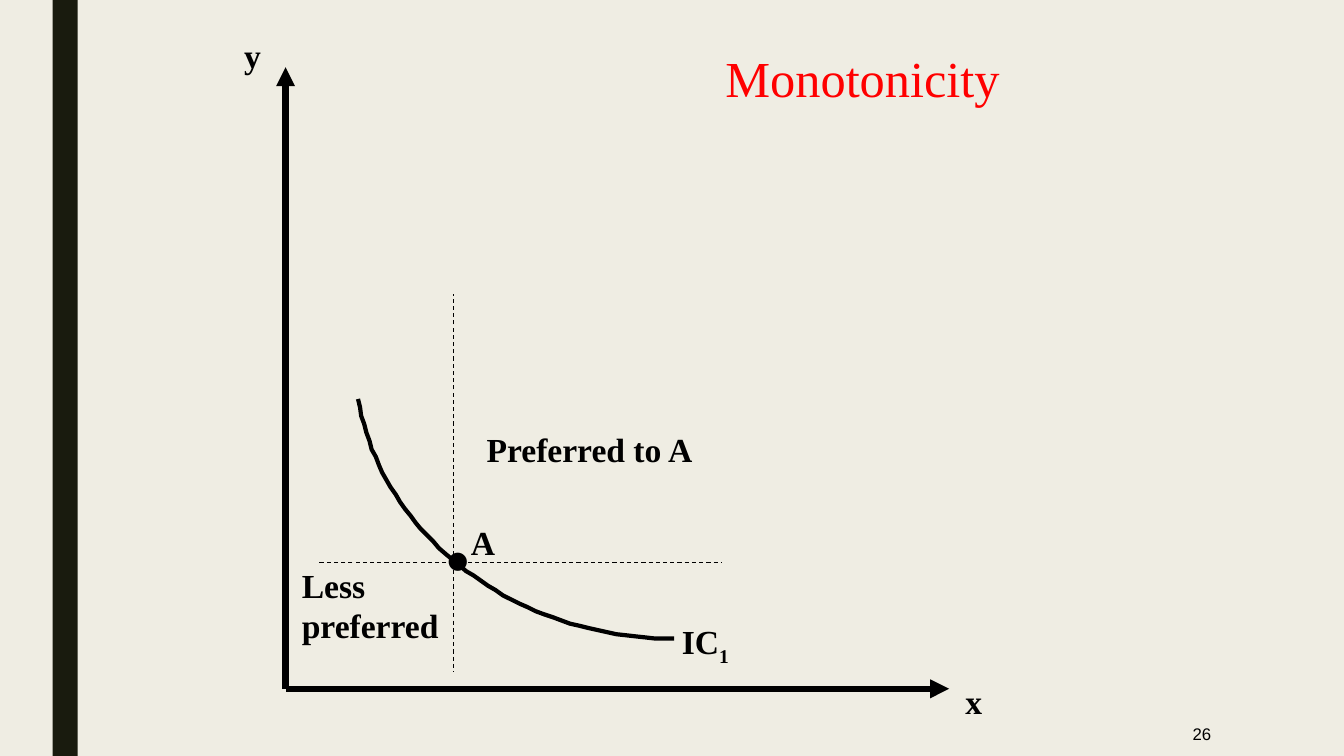
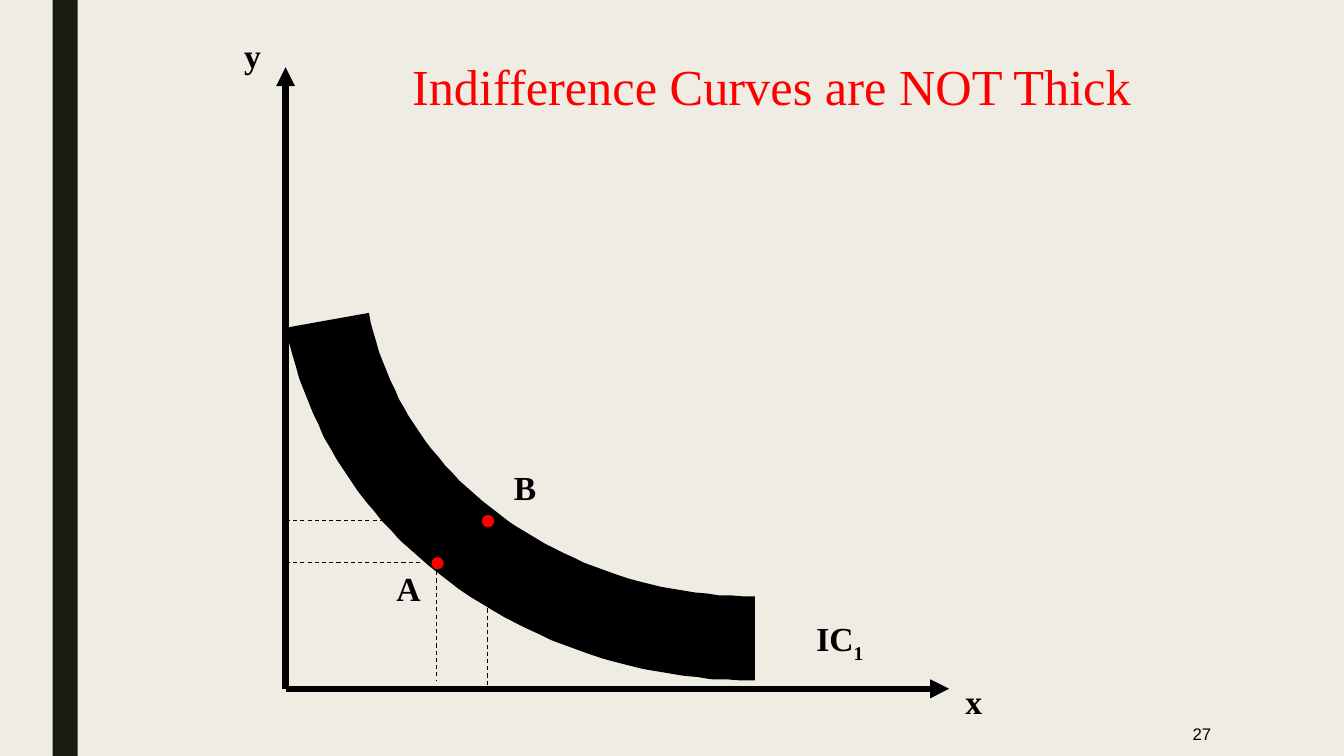
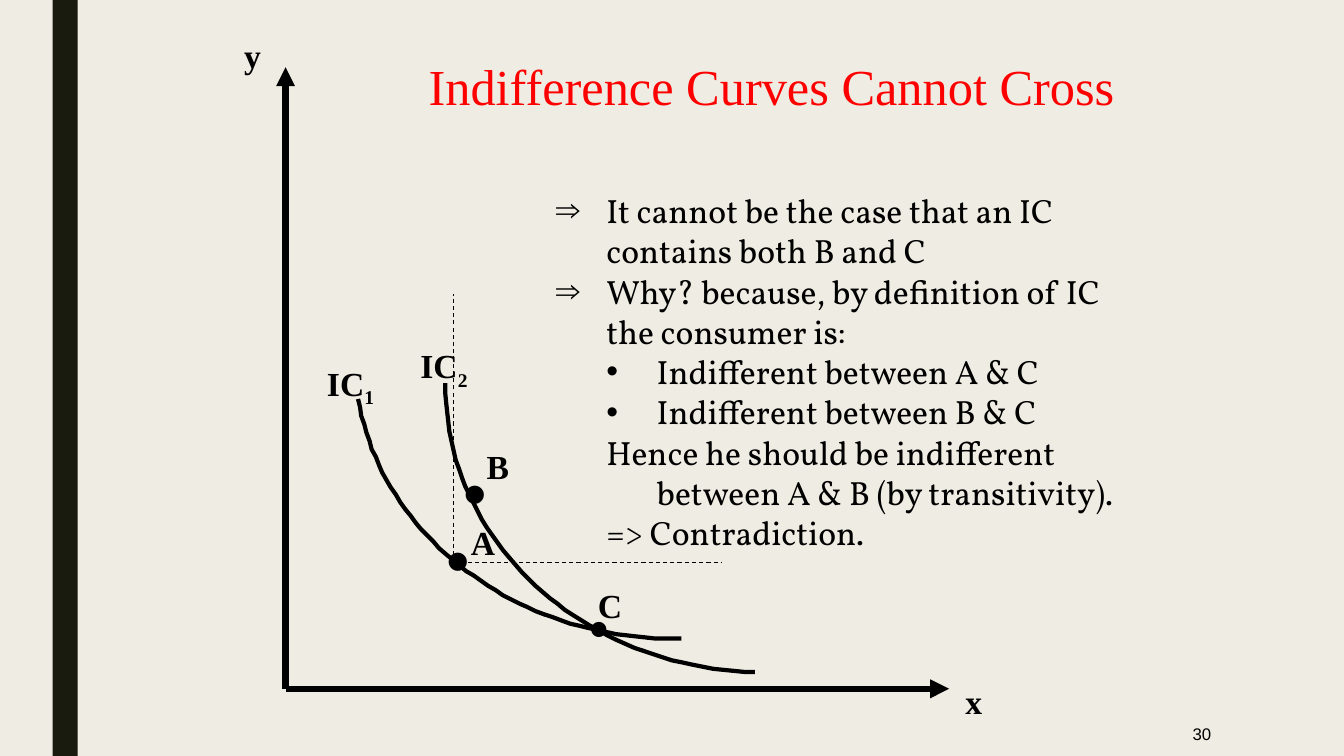
from lxml import etree
from pptx import Presentation
from pptx import util as u
from pptx.dml.color import RGBColor
from pptx.enum import dml, shapes, text
from pptx.oxml.ns import qn

PX = 9525
COLORS = {"paper": "EFEDE3", "band": "191B0E", "ink": "000000", "accent": "FF0000"}
SERIF, SANS, BODY = "Times New Roman", "Arial", "Vollkorn"
WIDTH, HEIGHT = 1280, 720
ORIGIN_X, ORIGIN_Y = 272, 656
X_END, Y_END = 904, 64
LABEL_HEIGHT = 48
POINT_A = (432, 536)
IC1 = [(642, 608), (492, 608), (364, 512), (341, 380)]
IC1_THICK = [(719, 608), (516, 608), (345, 480), (312, 305)]
IC2 = [(719, 640), (555, 636), (424, 516), (424, 365)]


def px(*lengths):
    return [u.Emu(length * PX) for length in lengths]


def rgb(name):
    return RGBColor.from_string(COLORS[name])


def add_text(slide, box, lines, size=24, font=SERIF, color="ink", bold=False,
             align=text.PP_ALIGN.LEFT, anchor=text.MSO_ANCHOR.TOP, wrap=False, grow=True):
    """Write one paragraph per line; what follows an underscore is a subscript."""
    frame = slide.shapes.add_textbox(*px(*box)).text_frame
    frame.word_wrap = wrap
    frame.auto_size = text.MSO_AUTO_SIZE.SHAPE_TO_FIT_TEXT if grow else text.MSO_AUTO_SIZE.NONE
    frame.vertical_anchor = anchor
    for number, line in enumerate(lines):
        paragraph = frame.paragraphs[0] if number == 0 else frame.add_paragraph()
        paragraph.alignment = align
        for depth, part in enumerate(line.split("_")):
            run = paragraph.add_run()
            run.text = part
            run.font.size, run.font.name, run.font.bold = u.Pt(size), font, bold
            run.font.color.rgb = rgb(color)
            if depth:
                run.font._element.set("baseline", "-25000")
    return frame


def add_label(slide, left, top, wording, width=42):
    add_text(slide, (left, top, width, LABEL_HEIGHT), [wording], bold=True)


def add_dot(slide, left, top, size=48, color="ink"):
    width, height = {32: (35, 60), 40: (48, 74), 48: (41, 86)}[size]
    add_text(slide, (left, top, width, height), ["•"], size=size, color=color, bold=True)


def add_line(slide, start, end, weight=0.75, dashed=True, arrow=False):
    line = slide.shapes.add_connector(shapes.MSO_CONNECTOR.STRAIGHT, *px(*start, *end))
    line.line.color.rgb = rgb("ink")
    line.line.width = u.Pt(weight)
    if dashed:
        line.line.dash_style = dml.MSO_LINE.DASH
    if arrow:
        etree.SubElement(line.line._get_or_add_ln(), qn("a:tailEnd"), type="triangle")
    etree.SubElement(line.element.spPr, qn("a:effectLst"))


def bezier(controls, steps=48):
    """Return points along a cubic curve."""
    points = []
    for step in range(steps + 1):
        t = step / steps
        weights = ((1 - t) ** 3, 3 * t * (1 - t) ** 2, 3 * t ** 2 * (1 - t), t ** 3)
        points.append(tuple(sum(w * c[axis] for w, c in zip(weights, controls))
                            for axis in (0, 1)))
    return points


def add_curve(slide, controls, weight=3, lead=()):
    start, *rest = [*lead, *bezier(controls)]
    builder = slide.shapes.build_freeform(*start, scale=PX)
    builder.add_line_segments(rest, close=False)
    curve = builder.convert_to_shape()
    curve.shadow.inherit = False
    curve.fill.background()
    curve.line.color.rgb = rgb("ink")
    curve.line.width = u.Pt(weight)


def add_title(slide, wording, box=(391, 48, 688, 78)):
    add_text(slide, box, [wording], size=36, color="accent",
             align=text.PP_ALIGN.CENTER, grow=False)


def add_axes(slide):
    for end in ((X_END, ORIGIN_Y), (ORIGIN_X, Y_END)):
        add_line(slide, (ORIGIN_X, ORIGIN_Y), end, weight=4.5, dashed=False, arrow=True)
    add_label(slide, 910, 644, "x", 36)
    add_label(slide, 223, 29, "y", 36)


def add_point_a(slide, ends):
    for end in ends:
        add_line(slide, POINT_A, end)
    add_dot(slide, 416, 488)
    add_label(slide, 439, 492, "A")


def style_layout(prs, layout):
    """Give the layout its background and side band."""
    layout.background.fill.solid()
    layout.background.fill.fore_color.rgb = rgb("paper")
    draft = prs.slides[0]
    band = draft.shapes.add_shape(shapes.MSO_SHAPE.RECTANGLE, *px(50, 0, 24, HEIGHT))
    band.shadow.inherit = False
    band.fill.solid()
    band.fill.fore_color.rgb = rgb("band")
    band.line.fill.background()
    layout.shapes.element.append(band.element)


def add_slide(prs, number):
    slide = prs.slides.add_slide(prs.slide_layouts[6])
    if len(prs.slides) == 1:
        style_layout(prs, slide.slide_layout)
    add_text(slide, (995, 678, 168, 42), [str(number)], size=12, font=SANS,
             align=text.PP_ALIGN.RIGHT, anchor=text.MSO_ANCHOR.MIDDLE, wrap=True, grow=False)
    add_axes(slide)
    return slide


def monotonicity(prs):
    slide = add_slide(prs, 26)
    add_title(slide, "Monotonicity", (610, 40, 423, 108))
    add_curve(slide, IC1)
    add_label(slide, 640, 587, "IC_1", 65)
    add_point_a(slide, [(688, 536), (432, 280), (432, 640), (304, 536)])
    add_label(slide, 454, 404, "Preferred to A", 218)
    add_text(slide, (278, 533, 151, 87), ["Less", "preferred"], bold=True)


def not_thick(prs):
    slide = add_slide(prs, 27)
    add_title(slide, "Indifference Curves are NOT Thick")
    add_curve(slide, IC1_THICK, weight=60)
    add_label(slide, 768, 584, "IC_1", 65)
    for x, top, level in ((416, 544, 536), (464, 552, 496)):
        add_line(slide, (x, top), (x, top + 104))
        add_line(slide, (400, level), (ORIGIN_X, level))
        add_dot(slide, x - 16, level - 32, size=32, color="accent")
    add_label(slide, 368, 536, "A")
    add_label(slide, 480, 440, "B")


def add_argument(slide):
    rows = [
        ("It cannot be the case that an IC contains both B and C", "⇒", 48, -48),
        ("Why? because, by definition of IC the consumer is:", "⇒", 48, -48),
        ("Indifferent between A & C", "•", 96, -48),
        ("Indifferent between B & C", "•", 96, -48),
        ("Hence he should be indifferent between A & B (by transitivity).", None, 96, -48),
        ("=> Contradiction.", None, 48, 0),
    ]
    frame = add_text(slide, (520, 176, 584, 359), [row[0] for row in rows],
                     font=BODY, wrap=True)
    for paragraph, (_, bullet, margin, indent) in zip(frame.paragraphs, rows):
        props = paragraph._p.get_or_add_pPr()
        props.set("marL", str(margin * PX))
        props.set("indent", str(indent * PX))
        if bullet:
            etree.SubElement(props, qn("a:buFont"), typeface=SANS)
            etree.SubElement(props, qn("a:buChar"), char=bullet)


def cannot_cross(prs):
    slide = add_slide(prs, 30)
    add_title(slide, "Indifference Curves Cannot Cross")
    add_curve(slide, IC1, lead=[(649, 608)])
    add_curve(slide, IC2)
    add_point_a(slide, [(688, 536), (432, 280)])
    add_dot(slide, 432, 424)
    add_label(slide, 454, 420, "B")
    add_dot(slide, 552, 560, size=40)
    add_label(slide, 560, 552, "C")
    add_label(slide, 302, 341, "IC_1", 65)
    add_label(slide, 391, 324, "IC_2", 65)
    add_argument(slide)


def main():
    prs = Presentation()
    prs.slide_width, prs.slide_height = px(WIDTH, HEIGHT)
    for build in (monotonicity, not_thick, cannot_cross):
        build(prs)
    prs.save("out.pptx")


if __name__ == "__main__":
    main()
